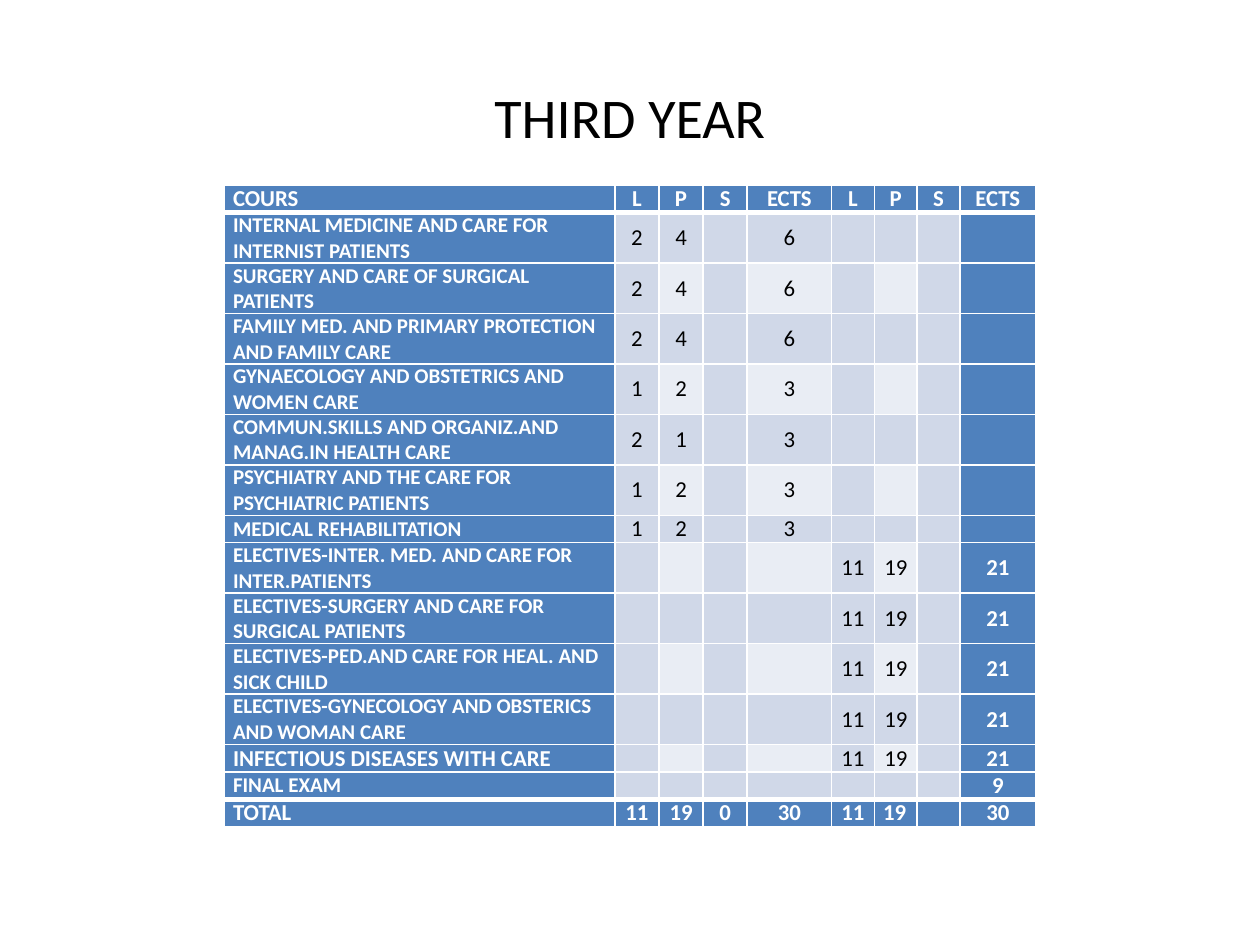
from lxml.etree import SubElement
from pptx import Presentation
from pptx.dml.color import RGBColor
from pptx.enum.text import MSO_ANCHOR, PP_ALIGN
from pptx.oxml.ns import qn
from pptx.util import Inches, Pt

COLORS = {"head": "4F81BD", "band": "D0D8E8", "light": "E9EDF4",
          "line": "FFFFFF", "white": "FFFFFF", "black": "000000"}
FONT = "Calibri"

HEADER = ["COURS", "L", "P", "S", "ECTS", "L", "P", "S", "ECTS"]
COURSES = [
    ("INTERNAL MEDICINE AND CARE FOR INTERNIST PATIENTS", 2, 4, "", 6),
    ("SURGERY AND CARE OF SURGICAL PATIENTS", 2, 4, "", 6),
    ("FAMILY MED. AND PRIMARY PROTECTION AND FAMILY CARE", 2, 4, "", 6),
    ("GYNAECOLOGY AND OBSTETRICS AND WOMEN CARE", 1, 2, "", 3),
    ("COMMUN.SKILLS AND ORGANIZ.AND MANAG.IN HEALTH CARE", 2, 1, "", 3),
    ("PSYCHIATRY AND THE CARE FOR PSYCHIATRIC PATIENTS", 1, 2, "", 3),
    ("MEDICAL REHABILITATION", 1, 2, "", 3),
]
ELECTIVES = [
    "ELECTIVES-INTER. MED. AND CARE FOR INTER.PATIENTS",
    "ELECTIVES-SURGERY AND CARE FOR SURGICAL PATIENTS",
    "ELECTIVES-PED.AND CARE FOR HEAL. AND SICK CHILD",
    "ELECTIVES-GYNECOLOGY AND OBSTERICS AND WOMAN CARE",
    "INFECTIOUS DISEASES WITH CARE",
]
ROWS = [HEADER]
ROWS += [[*course, "", "", "", ""] for course in COURSES]
ROWS += [[name, "", "", "", "", 11, 19, "", 21] for name in ELECTIVES]
ROWS += [["FINAL EXAM"] + [""] * 7 + [9],
         ["TOTAL", 11, 19, 0, 30, 11, 19, "", 30]]
LARGE_NAMES = {"COURS", "INFECTIOUS DISEASES WITH CARE", "TOTAL"}
COL_WIDTHS = [3.1, 0.35, 0.35, 0.35, 0.67, 0.34, 0.34, 0.34, 0.6]
ONE_LINE, TWO_LINES, MAX_LINE_CHARS = 0.21, 0.39, 30
last_row, last_col = len(ROWS) - 1, len(HEADER) - 1


def write(p, text, size, color, bold, align):
    p.alignment = align
    r = p.add_run()
    r.text = str(text)
    for name, value in {"name": FONT, "size": Pt(size), "bold": bold}.items():
        setattr(r.font, name, value)
    r.font.color.rgb = RGBColor.from_string(COLORS[color])


def add_borders(cell, widths):
    tcPr = cell._tc.get_or_add_tcPr()
    for side, width in widths.items():
        ln = SubElement(tcPr, qn(f"a:ln{side}"), w=str(Pt(width)))
        fill = SubElement(ln, qn("a:solidFill"))
        SubElement(fill, qn("a:srgbClr"), val=COLORS["line"])


prs = Presentation()
prs.slide_width, prs.slide_height = Inches(10), Inches(7.5)
s = prs.slides.add_slide(prs.slide_layouts[6])

# Title
tf = s.shapes.add_textbox(Inches(0.5), Inches(0.3), Inches(9), Inches(1.25)).text_frame
tf.word_wrap = True
tf.vertical_anchor = MSO_ANCHOR.MIDDLE
write(tf.paragraphs[0], "THIRD YEAR", 32, "black", False, PP_ALIGN.CENTER)

# Table grid
row_heights = [TWO_LINES if len(row[0]) > MAX_LINE_CHARS else ONE_LINE for row in ROWS]
table = s.shapes.add_table(len(ROWS), len(HEADER), Inches(1.78), Inches(1.47),
                           Inches(sum(COL_WIDTHS)), Inches(sum(row_heights))).table
for col, width in zip(table.columns, COL_WIDTHS):
    col.width = Inches(width)
for row, height in zip(table.rows, row_heights):
    row.height = Inches(height)

# Cells: solid edges, light and dark bands inside
CELL_FORMAT = {"margin_left": Inches(0.07), "margin_right": Inches(0.07),
               "margin_top": 0, "margin_bottom": 0,
               "vertical_anchor": MSO_ANCHOR.MIDDLE}
for i, row in enumerate(ROWS):
    for j, value in enumerate(row):
        cell = table.cell(i, j)
        for name, setting in CELL_FORMAT.items():
            setattr(cell, name, setting)
        add_borders(cell, {"L": 1, "R": 1,
                           "T": 3 if i in (1, last_row) else 1,
                           "B": 3 if i in (0, last_row - 1) else 1})
        edge = i in (0, last_row) or j in (0, last_col)
        light = i % 2 == 0 and j % 2 == 0
        cell.fill.solid()
        cell.fill.fore_color.rgb = RGBColor.from_string(
            COLORS["head" if edge else "light" if light else "band"])

        p = cell.text_frame.paragraphs[0]
        if value == "":
            SubElement(p._p, qn("a:endParaRPr"), sz="1200")
            continue
        size = 12 if j == 0 and value not in LARGE_NAMES else 13
        left = j == 0 or (i, j) == (last_row, 6)
        write(p, value, size, "white" if edge else "black", edge,
              PP_ALIGN.LEFT if left else PP_ALIGN.CENTER)

prs.save("out.pptx")
